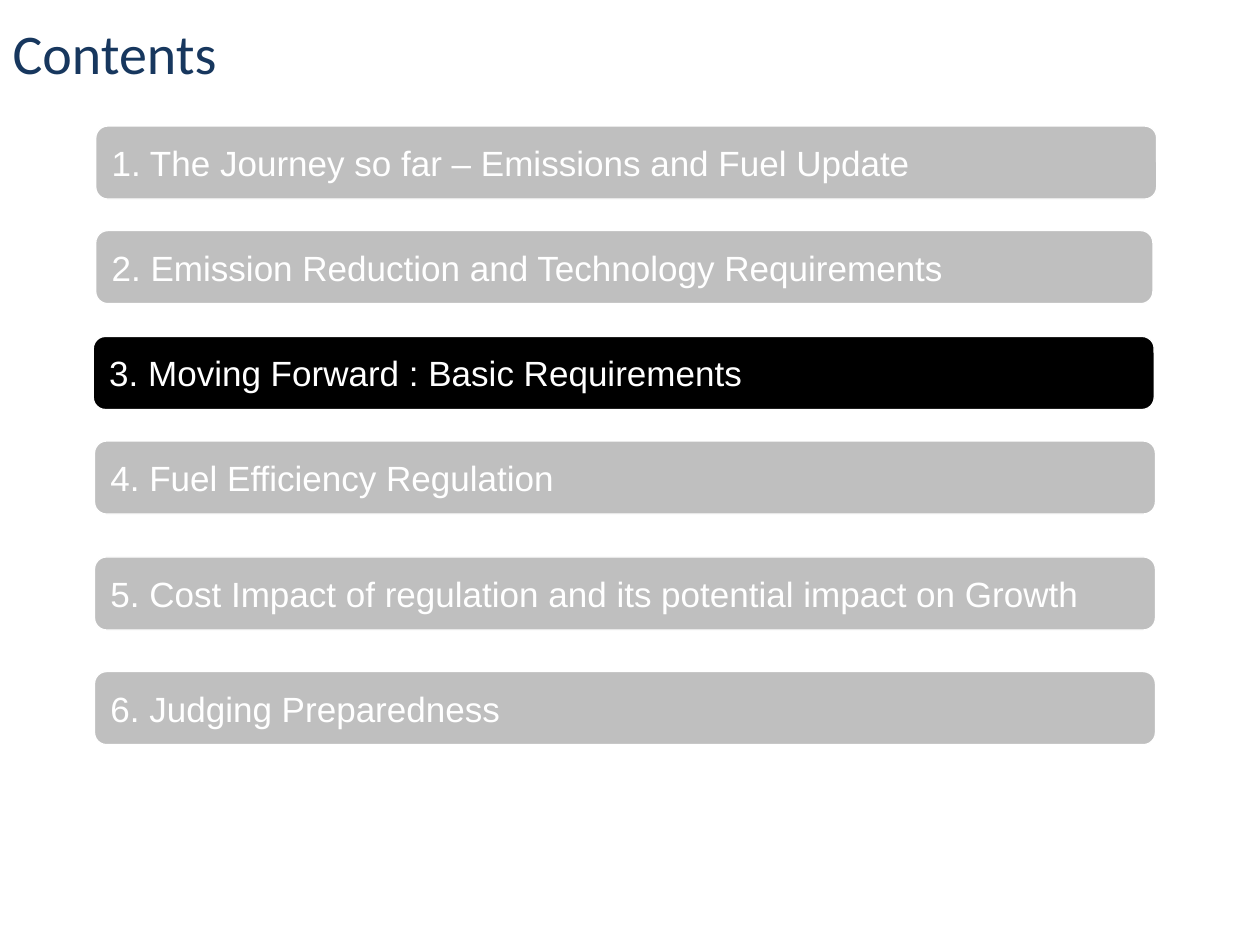
import pptx
import pptx.util
import pptx.dml.color
import pptx.enum.shapes
import pptx.enum.text

Inches = pptx.util.Inches
Pt = pptx.util.Pt

HUES = {"title": "17375E", "bar": "BFBFBF", "active": "000000", "white": "FFFFFF"}
ACTIVE = 3
HEIGHT = 0.58
BARS = [
    ("The Journey so far – Emissions and Fuel Update", 0.76, 1, 8.42),
    ("Emission Reduction and Technology Requirements", 0.76, 1.83, 8.39),
    ("Moving Forward : Basic Requirements", 0.74, 2.67, 8.42),
    ("Fuel Efficiency Regulation", 0.75, 3.5, 8.42),
    ("Cost Impact of regulation and its potential impact on Growth", 0.75, 4.42, 8.42),
    ("Judging Preparedness", 0.75, 5.33, 8.42),
]


class Deck:
    def __init__(self):
        self.show = pptx.Presentation()
        self.show.slide_width = Inches(10)
        self.show.slide_height = Inches(7.5)
        self.slide = self.show.slides.add_slide(self.show.slide_layouts[5])

    def hue(self, name):
        return pptx.dml.color.RGBColor.from_string(HUES[name])

    def label(self, shape, text, font, size, hue, wrap):
        frame = shape.text_frame
        frame.word_wrap = wrap
        frame.vertical_anchor = pptx.enum.text.MSO_ANCHOR.MIDDLE
        para = frame.paragraphs[0]
        para.alignment = pptx.enum.text.PP_ALIGN.LEFT
        run = para.add_run()
        run.text = text
        run.font.name = font
        run.font.size = Pt(size)
        run.font.color.rgb = self.hue(hue)

    def title(self, text):
        shape = self.slide.shapes.title
        shape.left, shape.top = Inches(0), Inches(0)
        shape.width, shape.height = Inches(10), Inches(0.83)
        self.label(shape, text, "Calibri", 32, "title", True)

    def bar(self, text, left, top, width, fill):
        shape = self.slide.shapes.add_shape(
            pptx.enum.shapes.MSO_SHAPE.FLOWCHART_ALTERNATE_PROCESS,
            Inches(left), Inches(top), Inches(width), Inches(HEIGHT))
        shape.shadow.inherit = False
        shape.fill.solid()
        shape.fill.fore_color.rgb = self.hue(fill)
        shape.line.color.rgb = self.hue("white")
        shape.line.width = Pt(0.75)
        self.label(shape, text, "Arial", 20, "white", False)


def main():
    deck = Deck()
    deck.title("Contents")
    for num, (text, left, top, width) in enumerate(BARS, 1):
        fill = "active" if num == ACTIVE else "bar"
        deck.bar(f"{num}. {text}", left, top, width, fill)
    deck.show.save("out.pptx")


if __name__ == "__main__":
    main()
